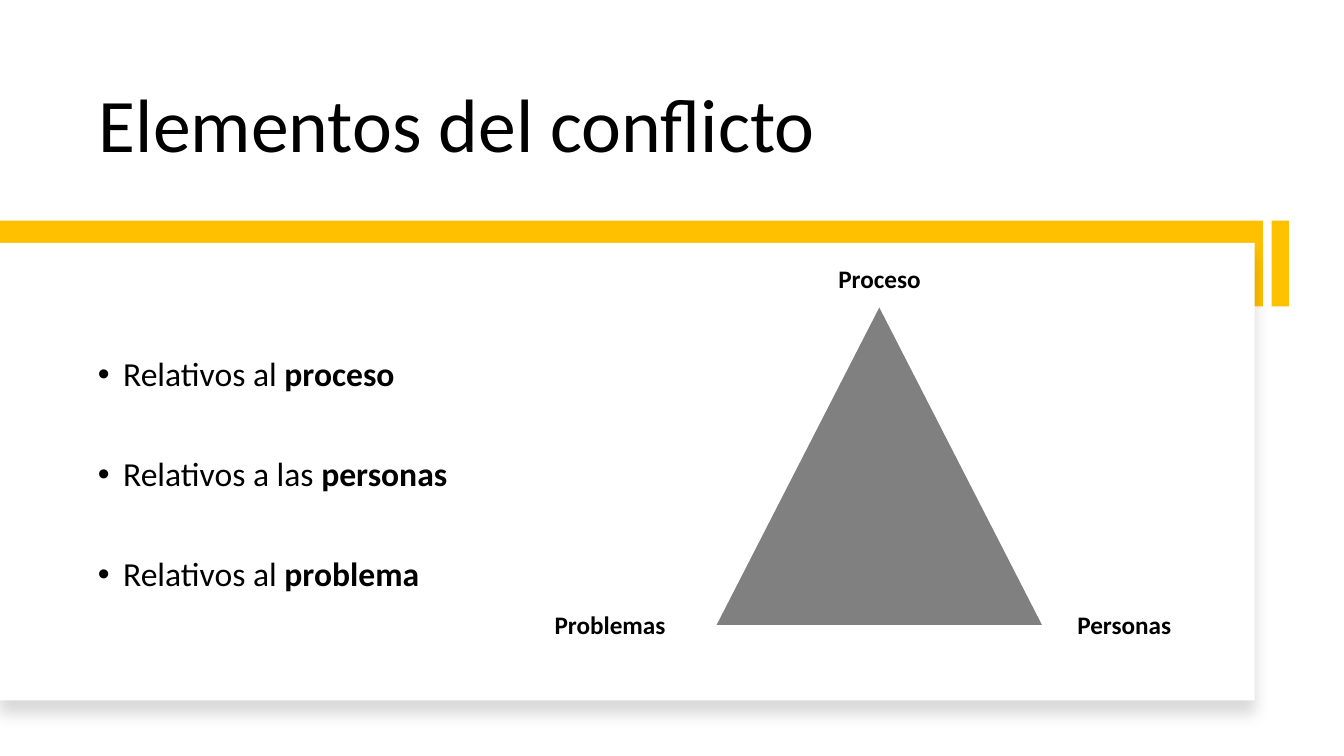
from lxml import etree
from pptx import Presentation
from pptx.dml.color import RGBColor
from pptx.enum import shapes, text
from pptx.oxml import ns
from pptx.util import Cm, Pt

COLORS = {"ink": "000000", "accent": "FFC000", "card": "FFFFFF", "triangle": "808080"}
FONT = "Calibri"
BULLETS = [
    ("Relativos al ", "proceso"),
    ("Relativos a las ", "personas"),
    ("Relativos al ", "problema"),
]
CORNERS = [("Proceso", 19.46, 6.5), ("Personas", 25.63, 15.24), ("Problemas", 12.67, 15.24)]


def place(item, left, top, width, height):
    item.left, item.top, item.width, item.height = map(Cm, (left, top, width, height))


def add_span(para, words, size, bold=False):
    span = para.add_run()
    span.text = words
    span.font.name = FONT
    span.font.size = Pt(size)
    span.font.bold = bold
    span.font.color.rgb = RGBColor.from_string(COLORS["ink"])


def add_block(page, kind, color, *bounds):
    block = page.shapes.add_shape(kind, *map(Cm, bounds))
    block.shadow.inherit = False
    block.fill.solid()
    block.fill.fore_color.rgb = RGBColor.from_string(COLORS[color])
    block.line.fill.background()
    return block


def add_soft_shadow(block):
    effects = block.element.spPr.find(ns.qn("a:effectLst"))
    shadow = etree.SubElement(
        effects, ns.qn("a:outerShdw"), blurRad=str(Pt(11)), dist=str(Pt(10)),
        dir="5400000", algn="t", rotWithShape="0")
    color = etree.SubElement(shadow, ns.qn("a:srgbClr"), val=COLORS["ink"])
    etree.SubElement(color, ns.qn("a:alpha"), val="15000")


def add_backdrop(page):
    """Put the accent bars and the card behind the placeholders."""
    rectangle = shapes.MSO_SHAPE.RECTANGLE
    tab = add_block(page, rectangle, "accent", 32.05, 5.56, 0.43, 2.16)
    bar = add_block(page, rectangle, "accent", 0, 5.56, 31.83, 2.16)
    card = add_block(page, rectangle, "card", 0, 6.12, 31.62, 11.53)
    add_soft_shadow(card)
    for block in (tab, bar, card):
        page.shapes.title.element.addprevious(block.element)


def fill_title(title, words):
    place(title, 2.24, 1.07, 25.65, 3.3)
    frame = title.text_frame
    frame.auto_size = text.MSO_AUTO_SIZE.NONE
    frame.vertical_anchor = text.MSO_ANCHOR.BOTTOM
    para = frame.paragraphs[0]
    para.alignment = text.PP_ALIGN.LEFT
    para.line_spacing = 0.9
    add_span(para, words, 54)


def fill_bullets(body, items):
    place(body, 2.21, 7.21, 28.17, 9.55)
    frame = body.text_frame
    frame.auto_size = text.MSO_AUTO_SIZE.NONE
    frame.vertical_anchor = text.MSO_ANCHOR.MIDDLE
    for index, (lead, key) in enumerate(items):
        para = frame.add_paragraph() if index else frame.paragraphs[0]
        para.line_spacing = 0.9
        para.space_before = Pt(45.5 if index else 10)
        indent = Cm(0.64)
        properties = para._p.get_or_add_pPr()
        properties.set("marL", str(indent))
        properties.set("indent", str(-indent))
        etree.SubElement(properties, ns.qn("a:buFont"), typeface="Arial")
        etree.SubElement(properties, ns.qn("a:buChar"), char="•")
        add_span(para, lead, 24)
        add_span(para, key, 24, bold=True)


def add_label(page, words, left, top):
    box = page.shapes.add_textbox(Cm(left), Cm(top), Cm(5.41), Cm(1.02))
    box.text_frame.word_wrap = True
    box.text_frame.auto_size = text.MSO_AUTO_SIZE.SHAPE_TO_FIT_TEXT
    para = box.text_frame.paragraphs[0]
    para.alignment = text.PP_ALIGN.CENTER
    para.space_after = Pt(6)
    add_span(para, words, 18, bold=True)


def main():
    deck = Presentation()
    deck.slide_width, deck.slide_height = Cm(33.87), Cm(19.05)
    page = deck.slides.add_slide(deck.slide_layouts[1])
    add_backdrop(page)
    fill_title(page.shapes.title, "Elementos del conflicto")
    fill_bullets(page.placeholders[1], BULLETS)
    add_block(page, shapes.MSO_SHAPE.ISOSCELES_TRIANGLE, "triangle", 18.06, 7.75, 8.2, 8)
    for words, left, top in CORNERS:
        add_label(page, words, left, top)
    deck.save("out.pptx")


if __name__ == "__main__":
    main()
